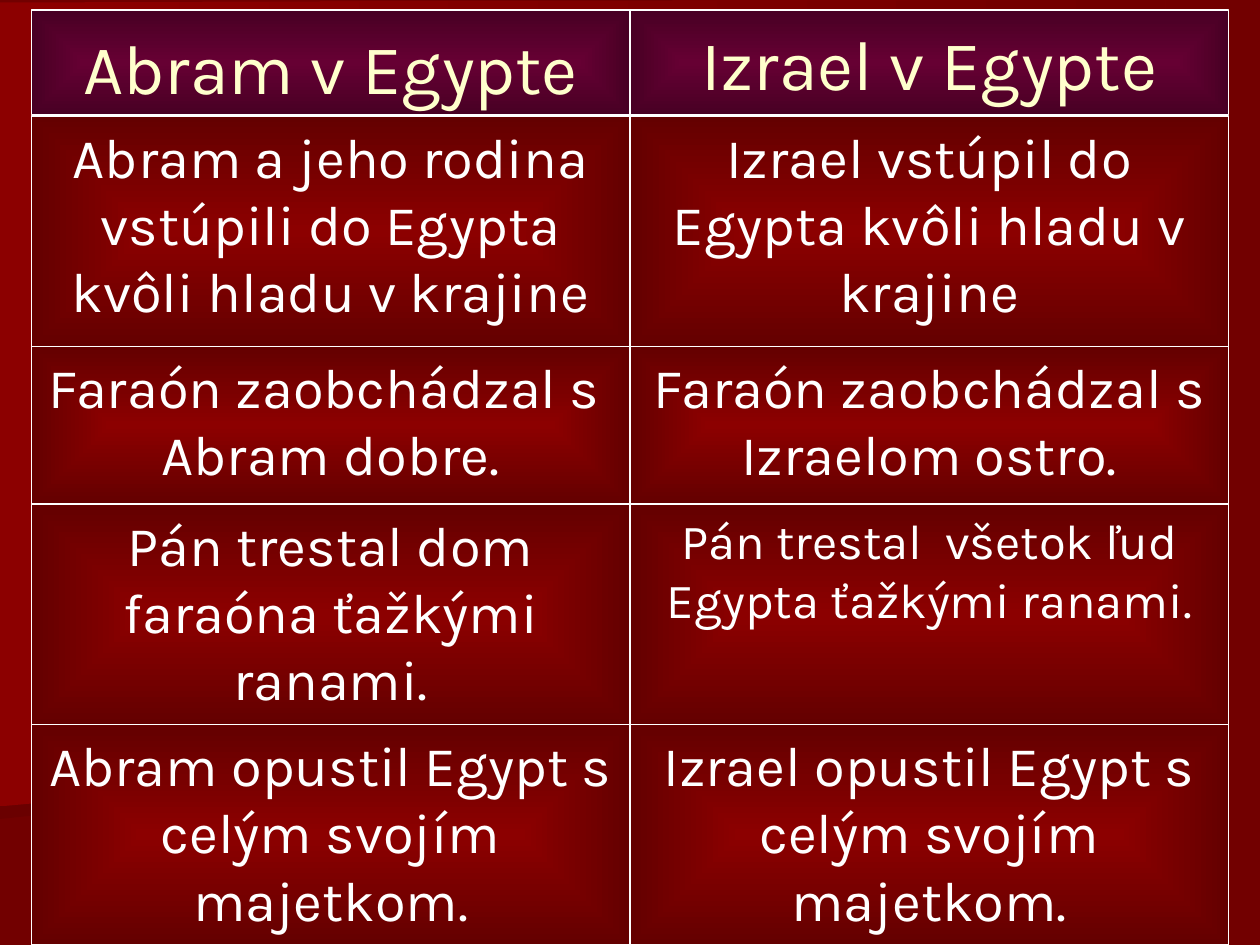
from lxml import etree
from pptx import Presentation
from pptx.dml.color import RGBColor
from pptx.enum.shapes import MSO_SHAPE
from pptx.enum.text import MSO_ANCHOR, MSO_AUTO_SIZE, PP_ALIGN
from pptx.oxml import parse_xml
from pptx.oxml.ns import qn
from pptx.util import Inches, Pt

COLORS = {
    "background": "720000",
    "band_shade": "6A0000",
    "red": "8C0000",
    "purple": "660033",
    "heading": "FFFFCC",
    "white": "FFFFFF",
}
FONT = "Karla"
LEFT, TOP, COLUMN_WIDTH = 0.25, 0.08, 4.75
HEADER_HEIGHT = 0.83
HEADINGS = ["Abram v Egypte", "Izrael v Egypte"]

# top, height, (text, size) for each column
ROWS = [
    (0.92, 1.83, [("Abram a jeho rodina vstúpili do Egypta kvôli hladu v krajine", 32),
                  ("Izrael vstúpil do Egypta kvôli hladu v krajine", 32)]),
    (2.75, 1.25, [("Faraón zaobchádzal s  Abram dobre.", 32),
                  ("Faraón zaobchádzal s Izraelom ostro.", 32)]),
    (4, 1.75, [("Pán trestal dom faraóna ťažkými ranami.", 32),
               ("Pán trestal  všetok ľud Egypta ťažkými ranami.", 28)]),
    (5.75, 1.75, [("Abram opustil Egypt s celým svojím majetkom.", 32),
                  ("Izrael opustil Egypt s celým svojím majetkom.", 32)]),
]

BANDS = [
    ("band_shade", [(8.95, 5.57), (0, 6.5), (0, 4.67), (8.95, 2.5)]),
    ("red", [(9.22, 5.57), (0, 6.4), (0, 0.02), (9.25, 0)]),
]


def rgb(name):
    return RGBColor.from_string(COLORS[name])


def fill_linear(shape, start, end):
    shape.fill.gradient()
    shape.fill.gradient_angle = 0
    for stop, name in zip(shape.fill.gradient_stops, (start, end)):
        stop.color.rgb = rgb(name)


def fill_from_center(shape, name):
    """Fade from the colour in the middle to a darker shade at the edges."""
    shape.fill.gradient()
    gradient = shape._element.spPr.find(qn("a:gradFill"))
    for stop in shape.fill.gradient_stops:
        stop.color.rgb = rgb(name)
    edge = gradient.findall(".//" + qn("a:srgbClr"))[-1]
    etree.SubElement(edge, qn("a:shade")).set("val", "46275")
    center = parse_xml(
        '<a:path xmlns:a="http://schemas.openxmlformats.org/drawingml/2006/main" path="shape">'
        '<a:fillToRect l="50000" t="50000" r="50000" b="50000"/></a:path>')
    gradient.replace(gradient.find(qn("a:lin")), center)


def add_band(slide, color, points):
    corners = [(Inches(x), Inches(y)) for x, y in points]
    builder = slide.shapes.build_freeform(*corners[0], scale=1.0)
    builder.add_line_segments(corners[1:], close=True)
    band = builder.convert_to_shape()
    band.shadow.inherit = False
    band.line.fill.background()
    fill_linear(band, color, "background")


def format_cell(shape, text, size, fill, color, anchor):
    fill_from_center(shape, fill)
    shape.line.color.rgb = rgb("white")
    shape.line.width = Pt(0.75)
    frame = shape.text_frame
    frame.text = text
    frame.word_wrap = True
    frame.auto_size = MSO_AUTO_SIZE.NONE
    frame.vertical_anchor = anchor
    paragraph = frame.paragraphs[0]
    paragraph.alignment = PP_ALIGN.CENTER
    font = paragraph.runs[0].font
    font.name = FONT
    font.size = Pt(size)
    font.color.rgb = rgb(color)
    return paragraph


def add_cell(slide, column, top, height):
    cell = slide.shapes.add_shape(
        MSO_SHAPE.RECTANGLE, Inches(LEFT + column * COLUMN_WIDTH), Inches(top),
        Inches(COLUMN_WIDTH), Inches(height))
    cell.shadow.inherit = False
    return cell


def add_headings(slide):
    title = slide.shapes.title
    title.left, title.top = Inches(LEFT), Inches(TOP)
    title.width, title.height = Inches(COLUMN_WIDTH), Inches(HEADER_HEIGHT)
    slide.shapes._spTree.append(title._element)  # bring in front of the bands
    second = add_cell(slide, 1, TOP, HEADER_HEIGHT)
    anchors = (MSO_ANCHOR.BOTTOM, MSO_ANCHOR.MIDDLE)
    for shape, text, anchor in zip((title, second), HEADINGS, anchors):
        format_cell(shape, text, 40, "purple", "heading", anchor)


def add_row(slide, top, height, entries):
    for column, (text, size) in enumerate(entries):
        cell = add_cell(slide, column, top, height)
        paragraph = format_cell(cell, text, size, "red", "white", MSO_ANCHOR.TOP)
        paragraph.space_before = Pt(0.2 * size)


def main():
    presentation = Presentation()
    presentation.slide_width, presentation.slide_height = Inches(10), Inches(7.5)
    slide = presentation.slides.add_slide(presentation.slide_layouts[5])
    slide.background.fill.solid()
    slide.background.fill.fore_color.rgb = rgb("background")
    for color, points in BANDS:
        add_band(slide, color, points)
    add_headings(slide)
    for row in ROWS:
        add_row(slide, *row)
    presentation.save("out.pptx")


if __name__ == "__main__":
    main()
